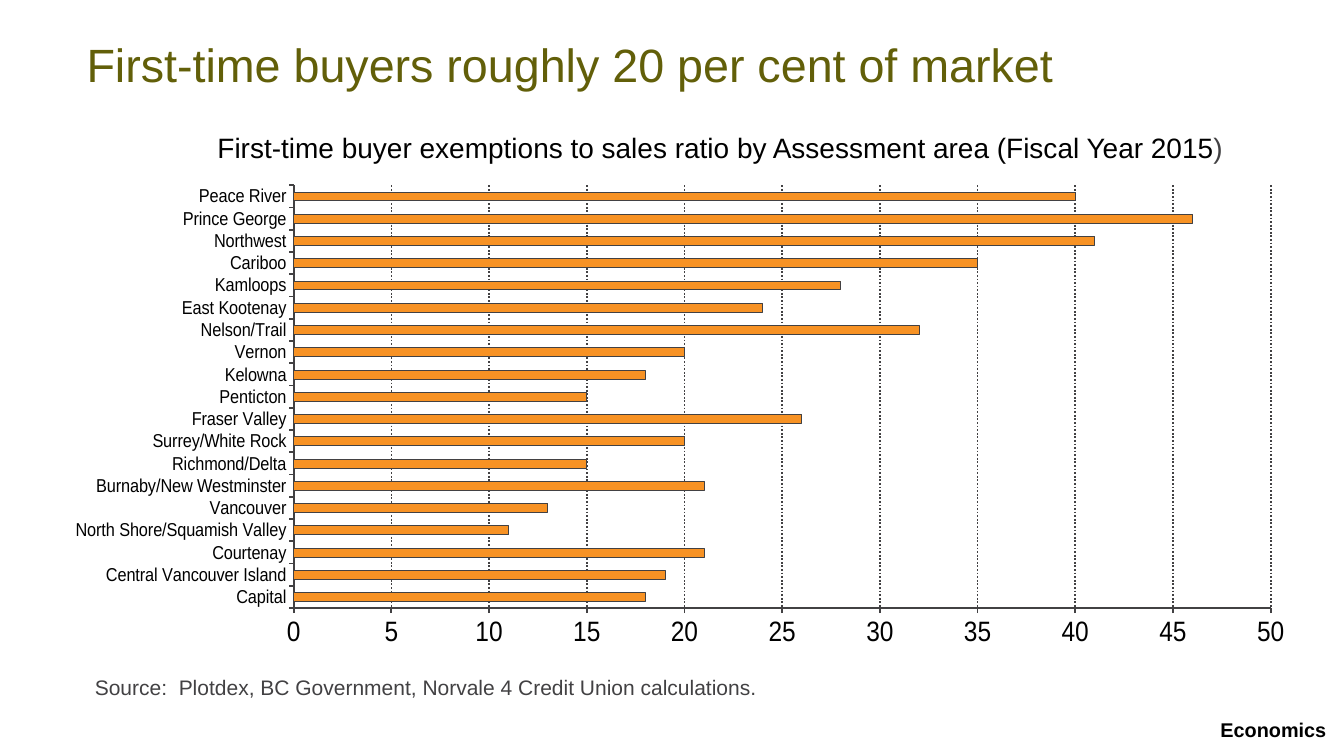
from lxml import etree
from pptx import Presentation
from pptx.chart.data import CategoryChartData
from pptx.dml.color import RGBColor
from pptx.enum.chart import XL_CHART_TYPE, XL_TICK_LABEL_POSITION, XL_TICK_MARK
from pptx.enum.dml import MSO_LINE
from pptx.enum.text import MSO_ANCHOR, PP_ALIGN
from pptx.oxml.ns import qn
from pptx.util import Inches, Pt

COLORS = {"black": "000000", "gray": "424143", "olive": "625F09", "orange": "F79224"}
FONT = "Arial"
RATIOS = {
    "Capital": 18,
    "Central Vancouver Island": 19,
    "Courtenay": 21,
    "North Shore/Squamish Valley": 11,
    "Vancouver": 13,
    "Burnaby/New Westminster": 21,
    "Richmond/Delta": 15,
    "Surrey/White Rock": 20,
    "Fraser Valley": 26,
    "Penticton": 15,
    "Kelowna": 18,
    "Vernon": 20,
    "Nelson/Trail": 32,
    "East Kootenay": 24,
    "Kamloops": 28,
    "Cariboo": 35,
    "Northwest": 41,
    "Prince George": 46,
    "Peace River": 40,
}
PLOT_LAYOUT = {
    "layoutTarget": "inner", "xMode": "edge", "yMode": "edge",
    "x": 0.064, "y": 0.055, "w": 0.924, "h": 0.824,
}


def set_values(target, values):
    """Set each attribute of target from a dict."""
    for name, value in values.items():
        setattr(target, name, value)


def style_font(font, size, color, bold=False):
    """Give a font its face, size, weight and colour."""
    set_values(font, {"name": FONT, "size": Pt(size), "bold": bold})
    font.color.rgb = RGBColor.from_string(COLORS[color])


def style_line(line, width, dash=None):
    """Make a line gray with the given width and dash."""
    line.color.rgb = RGBColor.from_string(COLORS["gray"])
    set_values(line, {"width": Pt(width), "dash_style": dash})


def add_spans(para, spans, size, bold=False):
    """Add runs of text, each with its colour."""
    for text, color in spans:
        span = para.add_run()
        span.text = text
        style_font(span.font, size, color, bold)


def add_title(page, text):
    """Place and format the title placeholder."""
    title = page.shapes.title
    set_values(title, {
        "left": Inches(1.03), "top": Inches(0.5),
        "width": Inches(14.36), "height": Inches(0.81),
    })
    frame = title.text_frame
    set_values(frame, {
        "margin_left": 0, "margin_top": 0, "margin_right": 0, "margin_bottom": 0,
        "vertical_anchor": MSO_ANCHOR.TOP, "word_wrap": True,
    })
    para = frame.paragraphs[0]
    set_values(para, {"alignment": PP_ALIGN.LEFT, "line_spacing": 0.9})
    add_spans(para, [(text, "olive")], 40)


def add_label(page, position, spans, size, bold=False, wrap=False):
    """Add a one-paragraph text box."""
    box = page.shapes.add_textbox(*map(Inches, position))
    box.text_frame.word_wrap = wrap
    add_spans(box.text_frame.paragraphs[0], spans, size, bold)


def set_plot_layout(chart):
    """Fix the inner plot area within the chart."""
    plot_area = chart._chartSpace.chart.plotArea
    for old in plot_area.findall(qn("c:layout")):
        plot_area.remove(old)
    layout = etree.Element(qn("c:layout"))
    manual = etree.SubElement(layout, qn("c:manualLayout"))
    for tag, value in PLOT_LAYOUT.items():
        etree.SubElement(manual, qn(f"c:{tag}")).set("val", str(value))
    plot_area.insert(0, layout)


def style_axis(axis, size):
    """Format an axis line, its ticks and its labels."""
    set_values(axis, {
        "major_tick_mark": XL_TICK_MARK.OUTSIDE,
        "minor_tick_mark": XL_TICK_MARK.NONE,
    })
    style_line(axis.format.line, 1.75)
    style_font(axis.tick_labels.font, size, "black")


def add_ratio_chart(page):
    """Add the bar chart of ratios by assessment area."""
    data = CategoryChartData()
    data.categories = list(RATIOS)
    data.add_series("Series 1", list(RATIOS.values()))
    position = map(Inches, (0.9, 1.87, 14.39, 6.11))
    chart = page.shapes.add_chart(XL_CHART_TYPE.BAR_CLUSTERED, *position, data).chart
    set_values(chart, {"has_legend": False, "has_title": False})
    style_font(chart.font, 18, "gray")
    set_plot_layout(chart)

    plot = chart.plots[0]
    set_values(plot, {"gap_width": 150, "vary_by_categories": False})
    bars = plot.series[0].format
    bars.fill.solid()
    bars.fill.fore_color.rgb = RGBColor.from_string(COLORS["orange"])
    style_line(bars.line, 0.75)

    areas, ratios = chart.category_axis, chart.value_axis
    style_axis(areas, 16)
    areas.tick_label_position = XL_TICK_LABEL_POSITION.LOW
    style_axis(ratios, 24)
    set_values(ratios, {
        "minimum_scale": 0, "maximum_scale": 50, "major_unit": 5,
        "has_major_gridlines": True,
    })
    set_values(ratios.tick_labels, {
        "number_format": "#,##0", "number_format_is_linked": False,
    })
    style_line(ratios.major_gridlines.format.line, 1.75, MSO_LINE.ROUND_DOT)


def main():
    """Build the slide and save the deck."""
    deck = Presentation()
    set_values(deck, {"slide_width": Inches(16), "slide_height": Inches(9)})
    page = deck.slides.add_slide(deck.slide_layouts[5])
    add_title(page, "First-time buyers roughly 20 per cent of market")
    add_ratio_chart(page)
    heading = "First-time buyer exemptions to sales ratio by Assessment area (Fiscal Year 2015"
    add_label(page, (2.49, 1.5, 12.29, 0.5), [(heading, "black"), (")", "gray")], 24)
    source = "Source:  Plotdex, BC Government, Norvale 4 Credit Union calculations."
    add_label(page, (1.03, 7.98, 11.72, 0.42), [(source, "gray")], 18, wrap=True)
    add_label(page, (14.43, 8.49, 1.48, 0.39), [("Economics", "black")], 17, bold=True)
    deck.save("out.pptx")


if __name__ == "__main__":
    main()
